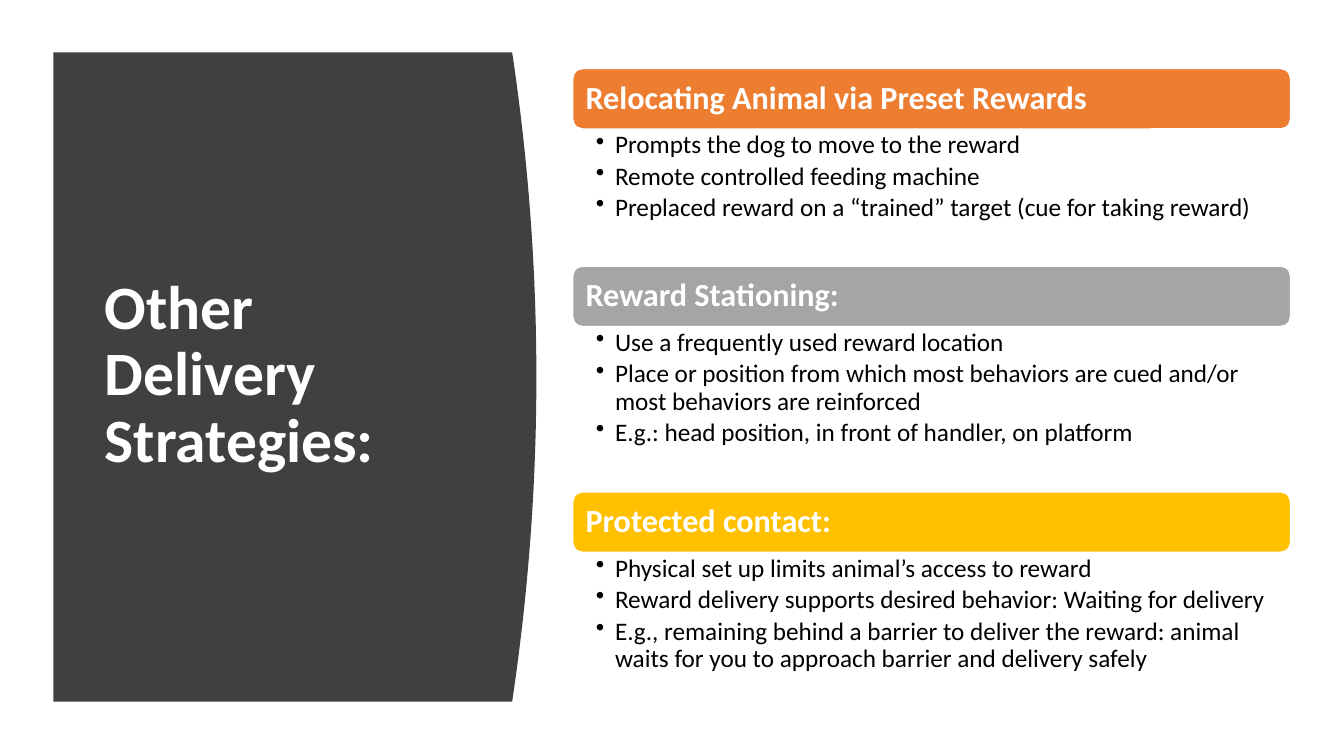
import pptx
import pptx.dml.color
import pptx.enum.shapes
import pptx.enum.text
import pptx.oxml
import pptx.util
from pptx.util import Inches

SECTIONS = [
    (0.68, 1.35, "ED7D31", "Relocating Animal via Preset Rewards", [
        "Prompts the dog to move to the reward",
        "Remote controlled feeding machine",
        "Preplaced reward on a “trained” target (cue for taking reward)"]),
    (2.64, 1.64, "A5A5A5", "Reward Stationing:", [
        "Use a frequently used reward location",
        "Place or position from which most behaviors are cued and/or most behaviors are reinforced",
        "E.g.: head position, in front of handler, on platform"]),
    (4.88, 1.3, "FFC000", "Protected contact:", [
        "Physical set up limits animal’s access to reward",
        "Reward delivery supports desired behavior: Waiting for delivery",
        "E.g., remaining behind a barrier to deliver the reward: animal waits for you to approach barrier and delivery safely"]),
]
LEFT, WIDTH, HEADER_HEIGHT = 5.68, 7.12, 0.6


def color(value):
    return pptx.dml.color.RGBColor.from_string(value)


def write(shape, lines, size, text_color, bold, anchor, insets):
    frame = shape.text_frame
    frame.text = "\n".join(lines)
    frame.word_wrap = True
    frame.vertical_anchor = anchor
    frame.margin_left, frame.margin_top, frame.margin_right, frame.margin_bottom = map(Inches, insets)
    for paragraph in frame.paragraphs:
        paragraph.alignment = pptx.enum.text.PP_ALIGN.LEFT
        paragraph.line_spacing = 0.9
        font = paragraph.runs[0].font
        font.name = "Calibri"
        font.size = pptx.util.Pt(size)
        font.bold = bold
        font.color.rgb = color(text_color)


presentation = pptx.Presentation()
presentation.slide_width = Inches(13.33)
presentation.slide_height = Inches(7.5)
slide = presentation.slides.add_slide(presentation.slide_layouts[6])
middle = pptx.enum.text.MSO_ANCHOR.MIDDLE
top_anchor = pptx.enum.text.MSO_ANCHOR.TOP

# Dark panel whose right edge bulges as a parabola
panel_left, panel_top, panel_bottom = 0.53, 0.52, 6.96
steps = 40
edge = []
for step in range(steps + 1):
    offset = 2 * step / steps - 1
    edge.append((Inches(5.32 - 0.24 * offset ** 2),
                 Inches(panel_top + (panel_bottom - panel_top) * step / steps)))
builder = slide.shapes.build_freeform(Inches(panel_left), Inches(panel_top))
builder.add_line_segments(edge + [(Inches(panel_left), Inches(panel_bottom))], close=True)
panel = builder.convert_to_shape()
panel.shadow.inherit = False
panel.fill.solid()
panel.fill.fore_color.rgb = color("404040")
panel.line.fill.background()

# Title
title = slide.shapes.add_textbox(Inches(0.94), Inches(1.11), Inches(3.74), Inches(5.24))
write(title, ["Other Delivery Strategies:"], 44, "FFFFFF", True, middle, (0.1, 0.05, 0.1, 0.05))

# Sections: coloured header with a bulleted list below
for top, list_height, fill, heading, points in SECTIONS:
    header = slide.shapes.add_shape(
        pptx.enum.shapes.MSO_SHAPE.ROUNDED_RECTANGLE,
        Inches(LEFT), Inches(top), Inches(WIDTH), Inches(HEADER_HEIGHT))
    header.shadow.inherit = False
    header.fill.solid()
    header.fill.fore_color.rgb = color(fill)
    header.line.color.rgb = color("FFFFFF")
    header.line.width = pptx.util.Pt(1)
    write(header, [heading], 23, "FFFFFF", True, middle, (0.1, 0.1, 0.1, 0.1))

    bullets = slide.shapes.add_textbox(
        Inches(LEFT), Inches(top + HEADER_HEIGHT), Inches(WIDTH), Inches(list_height))
    write(bullets, points, 18, "000000", False, top_anchor, (0.23, 0.03, 0.18, 0.03))
    for paragraph in bullets.text_frame.paragraphs:
        paragraph.space_after = pptx.util.Pt(3)
        properties = paragraph._p.get_or_add_pPr()
        properties.set("marL", str(Inches(0.19)))
        properties.set("indent", str(Inches(-0.19)))
        properties.append(pptx.oxml.parse_xml(
            '<a:buChar xmlns:a="http://schemas.openxmlformats.org/drawingml/2006/main" char="•"/>'))

presentation.save("out.pptx")
